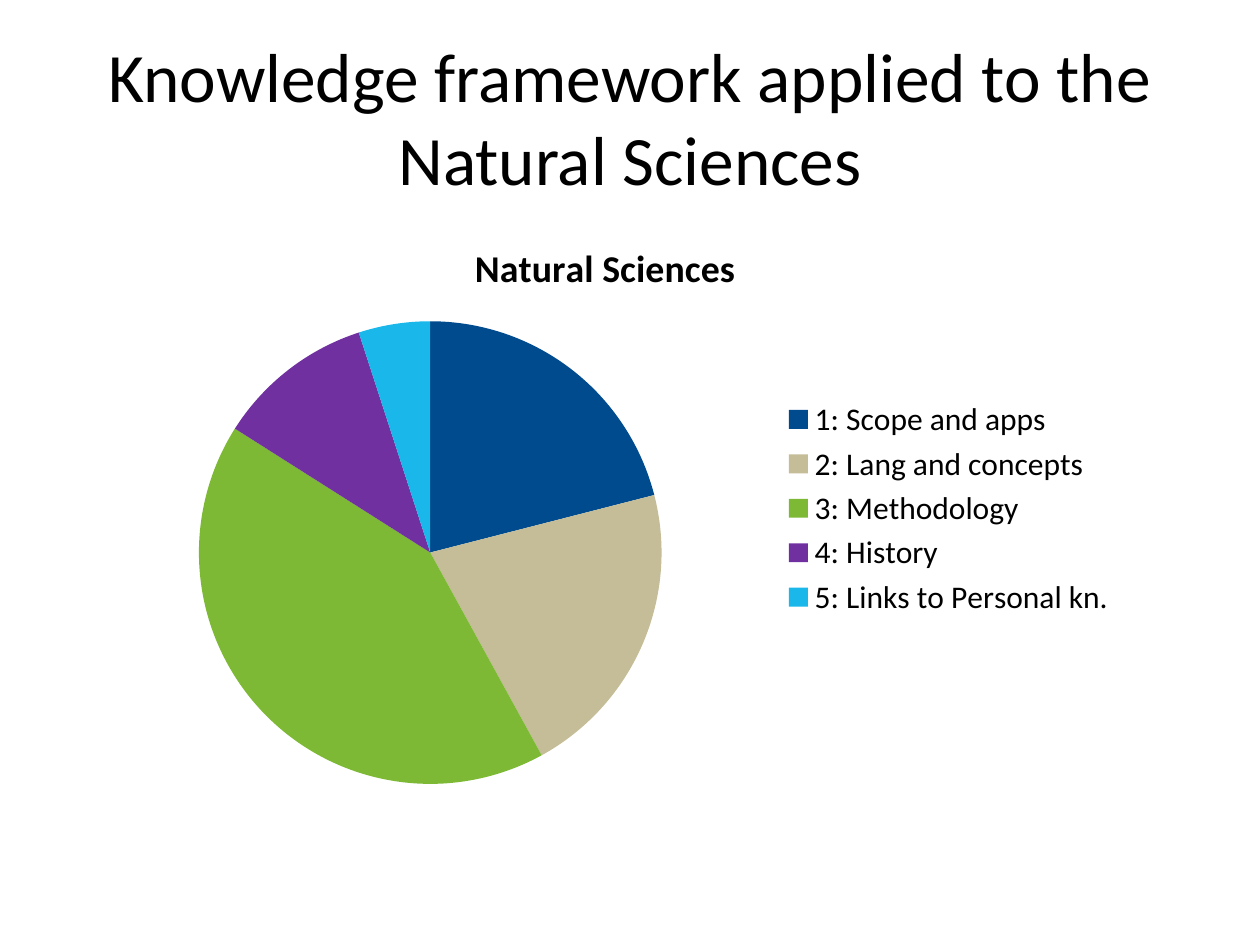
"""Build a slide with a pie chart of the knowledge framework."""
from pptx import Presentation
from pptx.chart.data import CategoryChartData
from pptx.dml.color import RGBColor
from pptx.enum.chart import XL_CHART_TYPE, XL_LEGEND_POSITION
from pptx.enum.text import MSO_ANCHOR, PP_ALIGN
from pptx.util import Inches, Pt

PIE = XL_CHART_TYPE.PIE
RIGHT = XL_LEGEND_POSITION.RIGHT
MIDDLE = MSO_ANCHOR.MIDDLE
CENTER = PP_ALIGN.CENTER
FONT = "Calibri"
COLORS = {
    "text": "000000",
    "scope": "004B8D",
    "language": "C4BD97",
    "methodology": "7DB935",
    "history": "7030A0",
    "links": "1AB7EA",
}
SLICES = [
    ("1: Scope and apps", 21, "scope"),
    ("2: Lang and concepts", 21, "language"),
    ("3: Methodology", 42, "methodology"),
    ("4: History", 11, "history"),
    ("5: Links to Personal kn.", 5, "links"),
]


def color(name):
    """Return the named colour."""
    return RGBColor.from_string(COLORS[name])


def style_font(font, size, bold=False):
    """Apply the slide's typeface and text colour."""
    font.name = FONT
    font.size = Pt(size)
    font.bold = bold
    font.color.rgb = color("text")


def add_title(page, text):
    """Fill and place the title placeholder."""
    title = page.shapes.title
    title.left, title.top = Inches(0.5), Inches(0.3)
    title.width, title.height = Inches(9), Inches(1.25)
    frame = title.text_frame
    frame.text = text
    frame.word_wrap = True
    frame.vertical_anchor = MIDDLE
    para = frame.paragraphs[0]
    para.alignment = CENTER
    style_font(para.runs[0].font, 39.6)


def add_pie(page, name):
    """Add the pie chart with its title and legend."""
    data = CategoryChartData()
    data.categories = [label for label, _, _ in SLICES]
    data.add_series(name, [value for _, value, _ in SLICES])
    chart = page.shapes.add_chart(
        PIE, Inches(0.65), Inches(1.71), Inches(8.31), Inches(4.65), data
    ).chart
    style_font(chart.font, 18)

    chart.has_title = True
    frame = chart.chart_title.text_frame
    frame.text = name
    style_font(frame.paragraphs[0].runs[0].font, 21.6, bold=True)
    chart.chart_title.include_in_layout = False

    chart.has_legend = True
    chart.legend.position = RIGHT
    chart.legend.include_in_layout = False
    style_font(chart.legend.font, 18)

    plot = chart.plots[0]
    plot.vary_by_categories = True
    for index, (_, _, shade) in enumerate(SLICES):
        fill = plot.series[0].points[index].format.fill
        fill.solid()
        fill.fore_color.rgb = color(shade)


def main():
    """Create and save the deck."""
    deck = Presentation()
    deck.slide_width, deck.slide_height = Inches(10), Inches(7.5)
    page = deck.slides.add_slide(deck.slide_layouts[5])
    add_title(page, "Knowledge framework applied to the Natural Sciences")
    add_pie(page, "Natural Sciences")
    deck.save("out.pptx")


if __name__ == "__main__":
    main()
